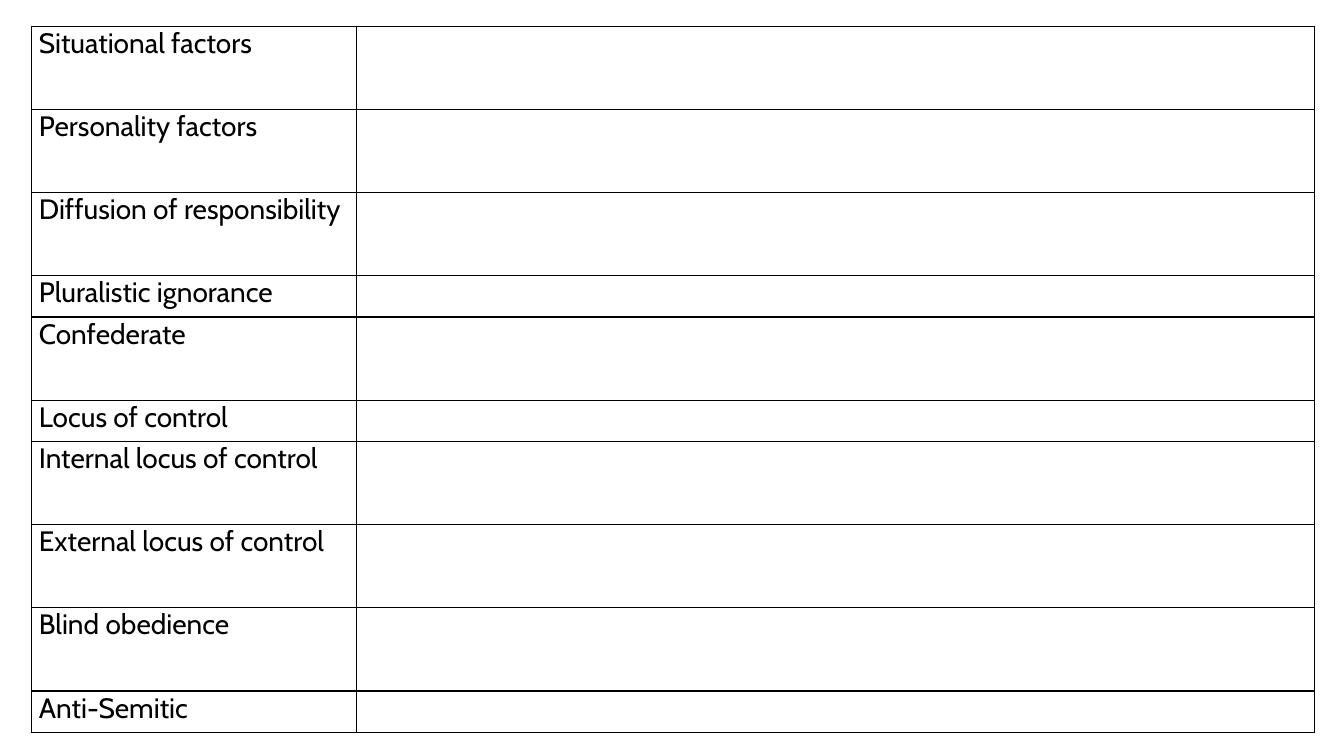
from lxml import etree
from pptx import Presentation
from pptx.dml.color import RGBColor
from pptx.enum.text import MSO_ANCHOR
from pptx.oxml.ns import qn
from pptx.util import Cm, Pt

TOP = MSO_ANCHOR.TOP
BLANK_LAYOUT = 6
FONT = "Cabin"
COLORS = {"text": "000000", "border": "000000"}

# Each term with its row height in units
TERMS = [
    ("Situational factors", 2),
    ("Personality factors", 2),
    ("Diffusion of responsibility", 2),
    ("Pluralistic ignorance", 1),
    ("Confederate", 2),
    ("Locus of control", 1),
    ("Internal locus of control", 2),
    ("External locus of control", 2),
    ("Blind obedience", 2),
    ("Anti-Semitic", 1),
]
COL_WIDTHS = [8.2, 24.13]
TABLE_HEIGHT = 17.8


def set_borders(cell):
    """Draw a thin line on all four sides of a cell."""
    tc_pr = cell._tc.get_or_add_tcPr()
    for side in ("lnL", "lnR", "lnT", "lnB"):
        ln = etree.SubElement(tc_pr, qn(f"a:{side}"), w=str(Pt(1)))
        fill = etree.SubElement(ln, qn("a:solidFill"))
        etree.SubElement(fill, qn("a:srgbClr"), val=COLORS["border"])


def format_cell(cell, text=""):
    cell.margin_left = cell.margin_right = Cm(0.19)
    cell.margin_top = cell.margin_bottom = 0
    cell.vertical_anchor = TOP
    set_borders(cell)
    cell.fill.background()
    cell.text_frame.text = text
    for r in cell.text_frame.paragraphs[0].runs:
        r.font.name = FONT
        r.font.size = Pt(20)
        r.font.bold = False
        r.font.color.rgb = RGBColor.from_string(COLORS["text"])


def add_glossary(slide):
    """Terms on the left, room for definitions on the right."""
    frame = slide.shapes.add_table(
        len(TERMS), len(COL_WIDTHS), Cm(0.79), Cm(0.66),
        Cm(sum(COL_WIDTHS)), Cm(TABLE_HEIGHT))
    table = frame.table
    table.first_row = table.horz_banding = False
    for col, width in zip(table.columns, COL_WIDTHS):
        col.width = Cm(width)

    unit = TABLE_HEIGHT / sum(units for _, units in TERMS)
    for row, (term, units) in zip(table.rows, TERMS):
        row.height = Cm(units * unit)
        format_cell(row.cells[0], term)
        format_cell(row.cells[1])


def main():
    prs = Presentation()
    prs.slide_width, prs.slide_height = Cm(33.87), Cm(19.05)
    slide = prs.slides.add_slide(prs.slide_layouts[BLANK_LAYOUT])
    add_glossary(slide)
    prs.save("out.pptx")


if __name__ == "__main__":
    main()
